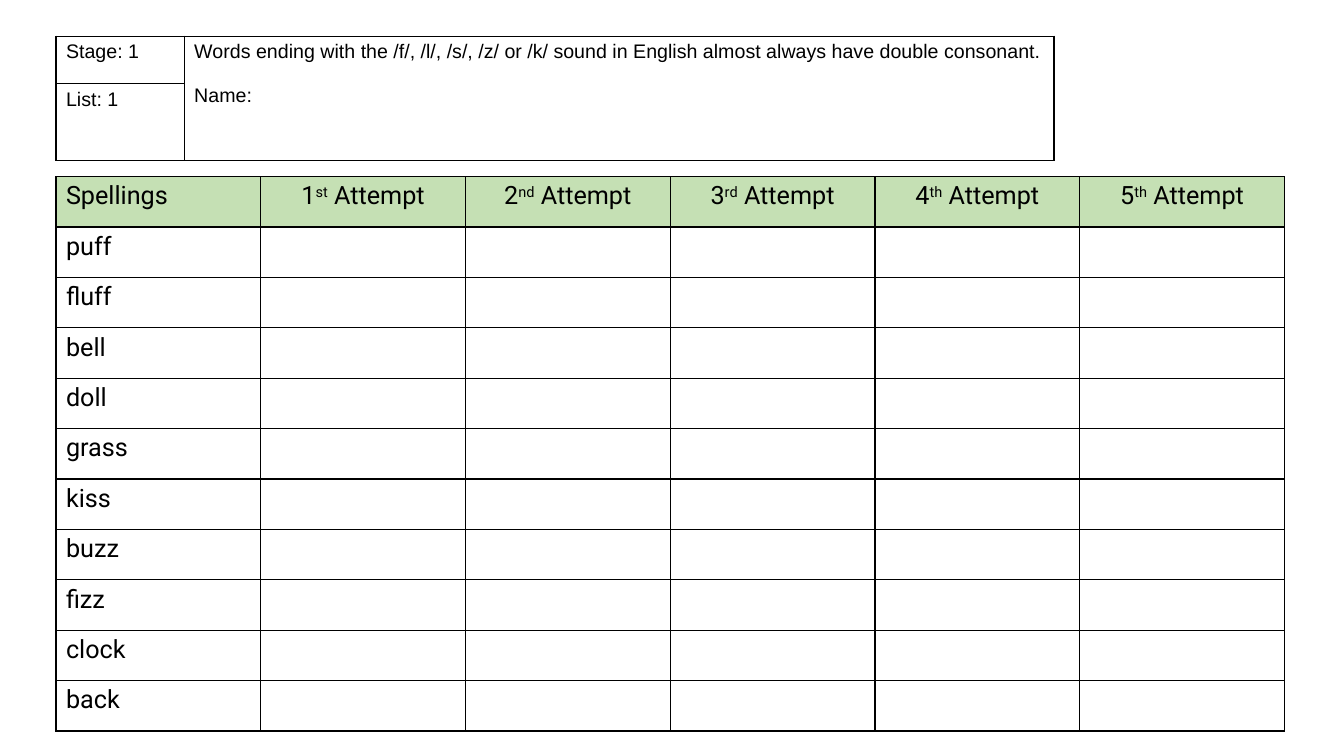
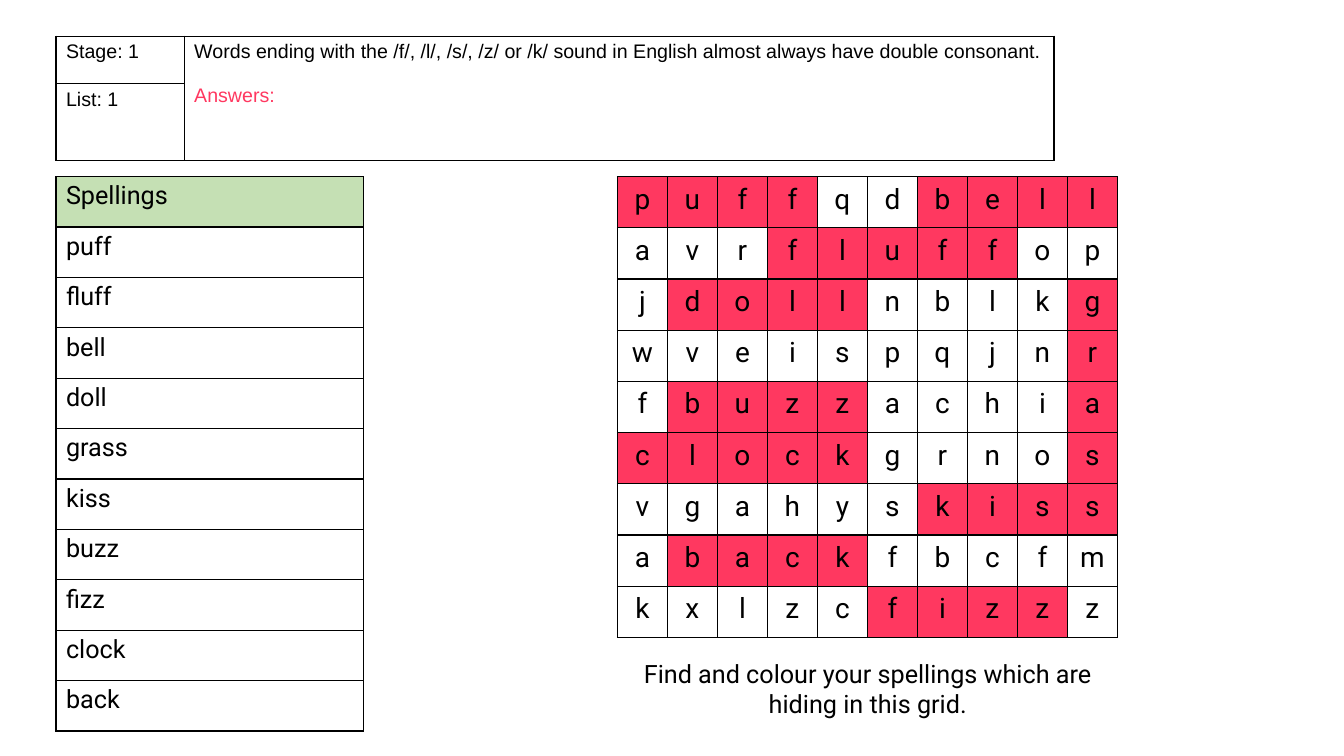
from dataclasses import dataclass
from lxml import etree
from pptx import Presentation
from pptx import util as u
from pptx.dml.color import RGBColor
from pptx.enum import text
from pptx.oxml import ns


@dataclass(frozen=True)
class Theme:
    ink: str = "000000"
    paper: str = "FFFFFF"
    green: str = "C5E0B4"
    red: str = "FF3860"
    sans: str = "Arial"
    round: str = "Roboto"
    small: int = 14
    body: int = 18
    large: int = 20
    left: float = 1.41
    top: float = 4.45
    row: float = 1.27


T = Theme()
MID = text.PP_ALIGN.CENTER
RULE = "Words ending with the /f/, /l/, /s/, /z/ or /k/ sound in English almost always have double consonant."
WORDS = "puff fluff bell doll grass kiss buzz fizz clock back".split()
TURNS = ["1st", "2nd", "3rd", "4th", "5th"]
GRID = [
    "puffqdbell",
    "avrfluffop",
    "jdollnblkg",
    "wveispqjnr",
    "fbuzzachia",
    "clockgrnos",
    "vgahyskiss",
    "abackfbcfm",
    "kxlzcfizzz",
]


def add_run(para, words, face=T.round, size=T.body, ink=T.ink, lift=False):
    run = para.add_run()
    run.text = words
    run.font.name = face
    run.font.size = u.Pt(size)
    run.font.color.rgb = RGBColor.from_string(ink)
    if lift:
        run._r.get_or_add_rPr().set("baseline", "30000")


def add_edges(cell):
    props = cell._tc.get_or_add_tcPr()
    for side in ("lnL", "lnR", "lnT", "lnB"):
        line = etree.SubElement(props, ns.qn("a:" + side), w=str(u.Pt(1)))
        fill = etree.SubElement(line, ns.qn("a:solidFill"))
        etree.SubElement(fill, ns.qn("a:srgbClr"), val=T.ink)


def paint(cell, color):
    cell.fill.solid()
    cell.fill.fore_color.rgb = RGBColor.from_string(color)


def add_table(slide, left, top, cols, rows):
    frame = slide.shapes.add_table(
        len(rows), len(cols), u.Cm(left), u.Cm(top), u.Cm(sum(cols)), u.Cm(sum(rows)))
    table = frame.table
    table.first_row = False
    table.horz_banding = False
    for col, width in zip(table.columns, cols):
        col.width = u.Cm(width)
    for row, height in zip(table.rows, rows):
        row.height = u.Cm(height)
    for cell in table.iter_cells():
        add_edges(cell)
        paint(cell, T.paper)
    return table


def add_header(slide, label, ink):
    table = add_table(slide, T.left, 0.91, [3.23, 21.92], [1.2, 1.93])
    table.cell(0, 1).merge(table.cell(1, 1))
    for row, words in enumerate(["Stage: 1", "List: 1"]):
        add_run(table.cell(row, 0).text_frame.paragraphs[0], words, T.sans, T.small)
    frame = table.cell(0, 1).text_frame
    add_run(frame.paragraphs[0], RULE, T.sans, T.small)
    para = frame.add_paragraph()
    para.space_before = u.Pt(15.5)
    add_run(para, label, T.sans, T.small, ink)


def add_words(slide, cols):
    table = add_table(slide, T.left, T.top, cols, [T.row] * (len(WORDS) + 1))
    for row, word in enumerate(["Spellings"] + WORDS):
        add_run(table.cell(row, 0).text_frame.paragraphs[0], word)
    for cell in table.rows[0].cells:
        paint(cell, T.green)
    return table


def add_turns(table):
    for col, turn in enumerate(TURNS, 1):
        para = table.cell(0, col).text_frame.paragraphs[0]
        para.alignment = MID
        add_run(para, turn[0])
        add_run(para, turn[1:], lift=True)
        add_run(para, " Attempt")


def find_hits():
    hits = set()
    for word in WORDS:
        for row, line in enumerate(GRID):
            at = line.find(word)
            if at >= 0:
                hits |= {(row, at + i) for i in range(len(word))}
        for col, line in enumerate(map("".join, zip(*GRID))):
            at = line.find(word)
            if at >= 0:
                hits |= {(at + i, col) for i in range(len(word))}
    return hits


def add_grid(slide, left):
    table = add_table(slide, left, T.top, [1.26] * len(GRID[0]), [1.29] * len(GRID))
    hits = find_hits()
    for row, line in enumerate(GRID):
        for col, letter in enumerate(line):
            cell = table.cell(row, col)
            cell.margin_left = cell.margin_right = u.Cm(0.18)
            cell.margin_top = cell.margin_bottom = 0
            para = cell.text_frame.paragraphs[0]
            para.alignment = MID
            para.line_spacing = 1.2
            para.space_after = u.Pt(10)
            add_run(para, letter, size=T.large)
            if (row, col) in hits:
                paint(cell, T.red)


def add_note(slide, left, words):
    box = slide.shapes.add_textbox(u.Cm(left), u.Cm(16.46), u.Cm(12.62), u.Cm(1.8))
    box.text_frame.word_wrap = True
    para = box.text_frame.paragraphs[0]
    para.alignment = MID
    add_run(para, words)


def main():
    deck = Presentation()
    deck.slide_width = u.Cm(33.87)
    deck.slide_height = u.Cm(19.05)
    blank = deck.slide_layouts[6]

    sheet = deck.slides.add_slide(blank)
    add_turns(add_words(sheet, [5.16] * 6))
    add_header(sheet, "Name:", T.ink)

    key = deck.slides.add_slide(blank)
    add_words(key, [7.75])
    add_header(key, "Answers:", T.red)
    add_grid(key, 15.56)
    add_note(key, 15.56, "Find and colour your spellings which are hiding in this grid.")

    deck.save("out.pptx")


if __name__ == "__main__":
    main()
